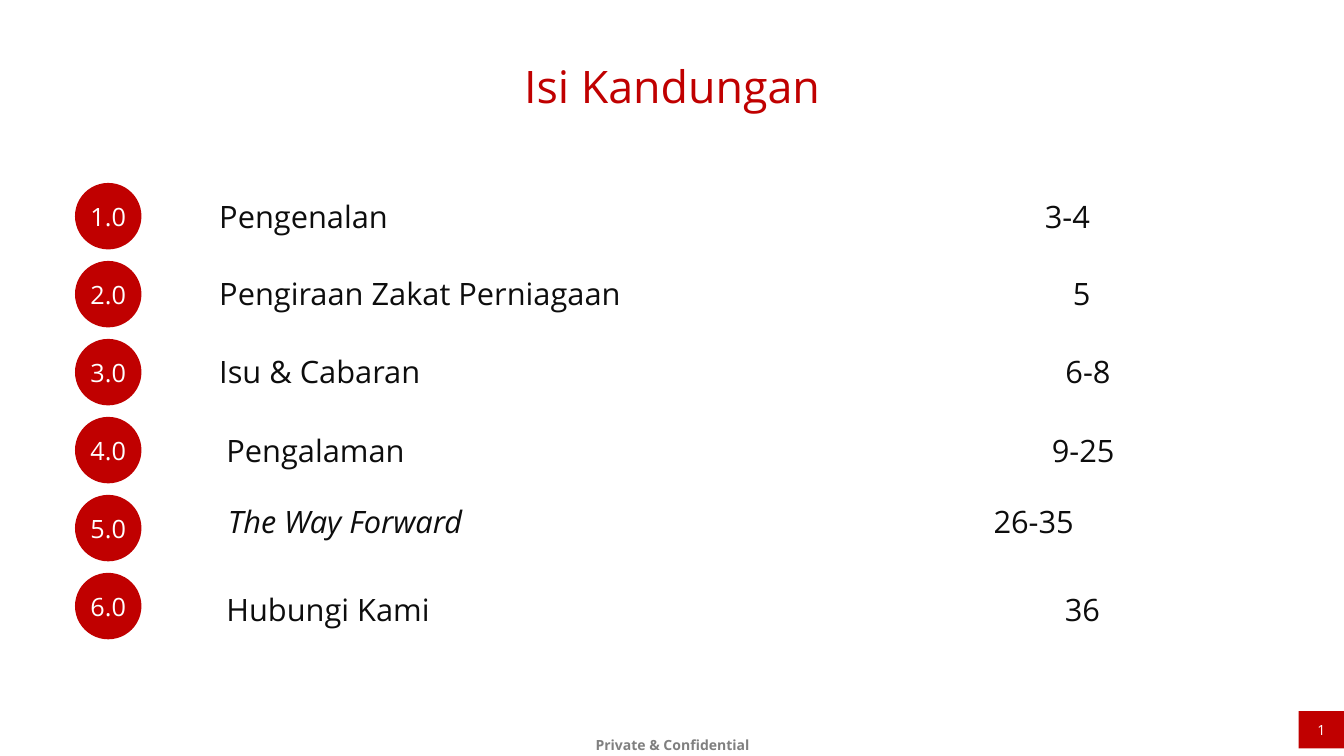
import pptx
import pptx.util
import pptx.dml.color
import pptx.enum.shapes
import pptx.enum.text
from pptx.util import Cm

Color = pptx.dml.color.RGBColor
Shape = pptx.enum.shapes.MSO_SHAPE
Align = pptx.enum.text.PP_ALIGN
Anchor = pptx.enum.text.MSO_ANCHOR

RED = Color(0xC0, 0x00, 0x00)
WHITE = Color(0xFF, 0xFF, 0xFF)
INK = Color(0x0D, 0x0D, 0x0D)
GRAY = Color(0x80, 0x80, 0x80)
FONT = "Open Sans"

TITLE = "Isi Kandungan"
FOOTER = "Private & Confidential"
# label, pages, left, top, right edge of pages, italic
ROWS = [
    ("Pengenalan", "3-4", 10.36, 9.63, 54.94, False),
    ("Pengiraan Zakat Perniagaan", "5", 10.36, 13.54, 54.97, False),
    ("Isu & Cabaran", "6-8", 10.36, 17.45, 55.98, False),
    ("Pengalaman", "9-25", 10.72, 21.41, 56.18, False),
    ("The Way Forward", "26-35", 10.8, 24.99, 54.13, True),
    ("Hubungi Kami", "36", 10.72, 29.46, 55.45, False),
]
DOT_LEFT, DOT_TOP, DOT_SIZE, DOT_STEP = 3.78, 9.22, 3.35, 3.93
ROW_WIDTH, ROW_HEIGHT = 49.66, 2.57
PAD_X, PAD_Y = 0.69, 0.33


def set_frame(shape, pad_x, pad_y, anchor=Anchor.TOP, wrap=True):
    frame = shape.text_frame
    frame.auto_size = pptx.enum.text.MSO_AUTO_SIZE.NONE
    frame.word_wrap = wrap
    frame.vertical_anchor = anchor
    frame.margin_left = frame.margin_right = Cm(pad_x)
    frame.margin_top = frame.margin_bottom = Cm(pad_y)
    return frame.paragraphs[0]


def add_run(para, text, size, color, bold=False, italic=False):
    run = para.add_run()
    run.text = text
    font = run.font
    font.name, font.size = FONT, pptx.util.Pt(size)
    font.bold, font.italic = bold, italic
    font.color.rgb = color


def add_badge(slide, kind, box, text, size, pad_y):
    badge = slide.shapes.add_shape(kind, *map(Cm, box))
    badge.shadow.inherit = False
    badge.fill.solid()
    badge.fill.fore_color.rgb = RED
    badge.line.fill.background()
    para = set_frame(badge, 0, pad_y, Anchor.MIDDLE, False)
    para.alignment = Align.CENTER
    add_run(para, text, size, WHITE)


def add_tab(para, stop):
    props = para._p.get_or_add_pPr()
    tabs = props.makeelement(pptx.oxml.ns.qn("a:tabLst"), {})
    props.append(tabs)
    tab = tabs.makeelement(pptx.oxml.ns.qn("a:tab"), {"pos": str(Cm(stop)), "algn": "r"})
    tabs.append(tab)


def add_row(slide, label, pages, left, top, edge, italic):
    box = slide.shapes.add_textbox(Cm(left), Cm(top), Cm(ROW_WIDTH), Cm(ROW_HEIGHT))
    para = set_frame(box, PAD_X, PAD_Y)
    add_tab(para, edge - left - PAD_X)
    add_run(para, label + "\t", 44, INK, italic=italic)
    add_run(para, pages, 44, INK)


def main():
    deck = pptx.Presentation()
    deck.slide_width, deck.slide_height = Cm(67.74), Cm(38.1)
    slide = deck.slides.add_slide(deck.slide_layouts[5])

    title = slide.shapes.title
    title.left, title.top, title.width, title.height = map(Cm, (3.89, 2.64, 59.97, 3.43))
    para = set_frame(title, PAD_X, PAD_Y)
    para.alignment = Align.CENTER
    add_run(para, TITLE, 64, RED)

    for index, row in enumerate(ROWS):
        dot = (DOT_LEFT, DOT_TOP + index * DOT_STEP, DOT_SIZE, DOT_SIZE)
        add_badge(slide, Shape.OVAL, dot, f"{index + 1}.0", 36, 0)
        add_row(slide, *row)

    foot = slide.shapes.add_textbox(*map(Cm, (29.29, 36.63, 9.22, 1.98)))
    para = set_frame(foot, 0.61, 0.3)
    para.alignment = Align.CENTER
    para.line_spacing = 1.2
    add_run(para, FOOTER, 20, GRAY, bold=True)

    add_badge(slide, Shape.RECTANGLE, (65.45, 35.84, 2.29, 1.88), "1", 20, 0)
    deck.save("out.pptx")


if __name__ == "__main__":
    main()
